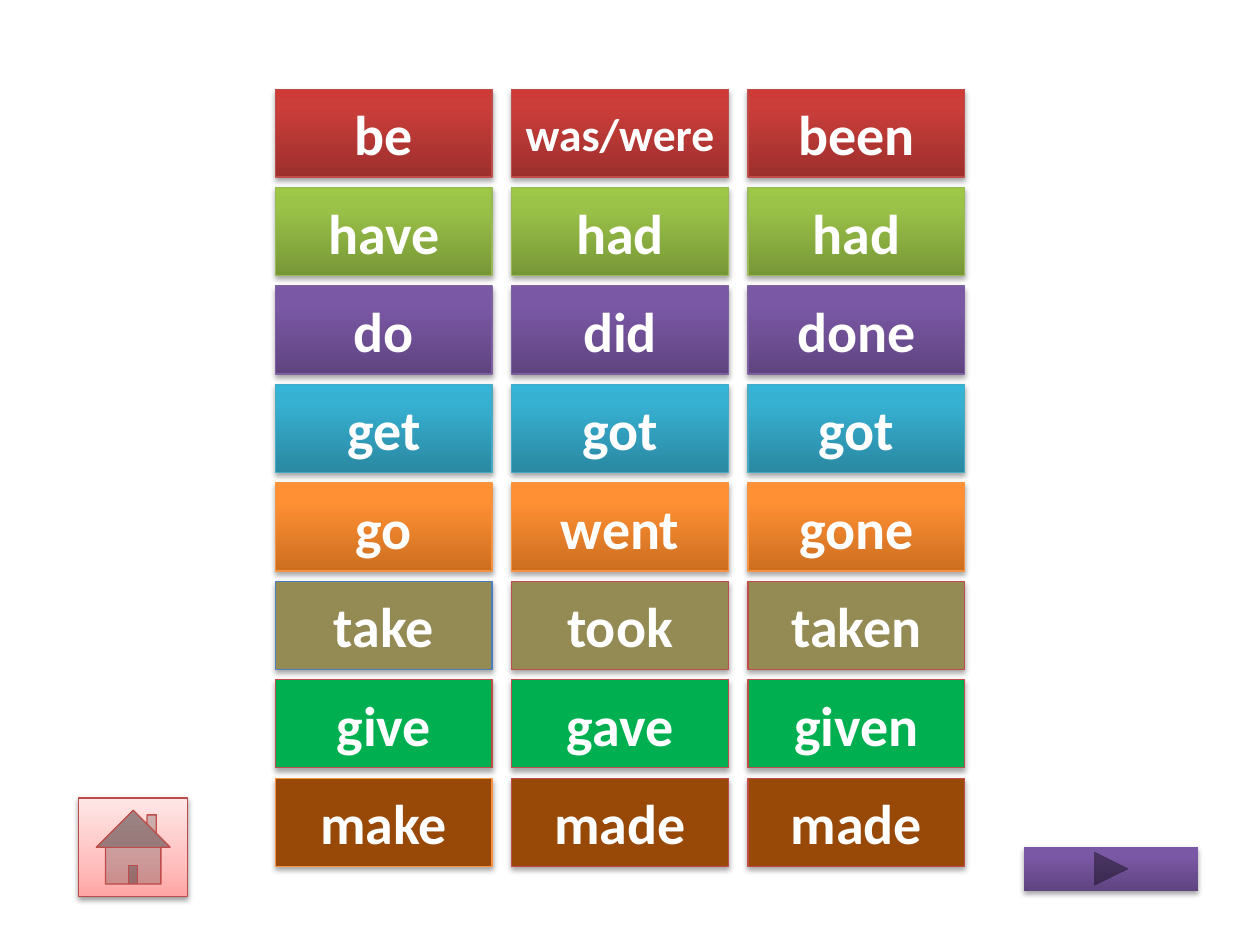
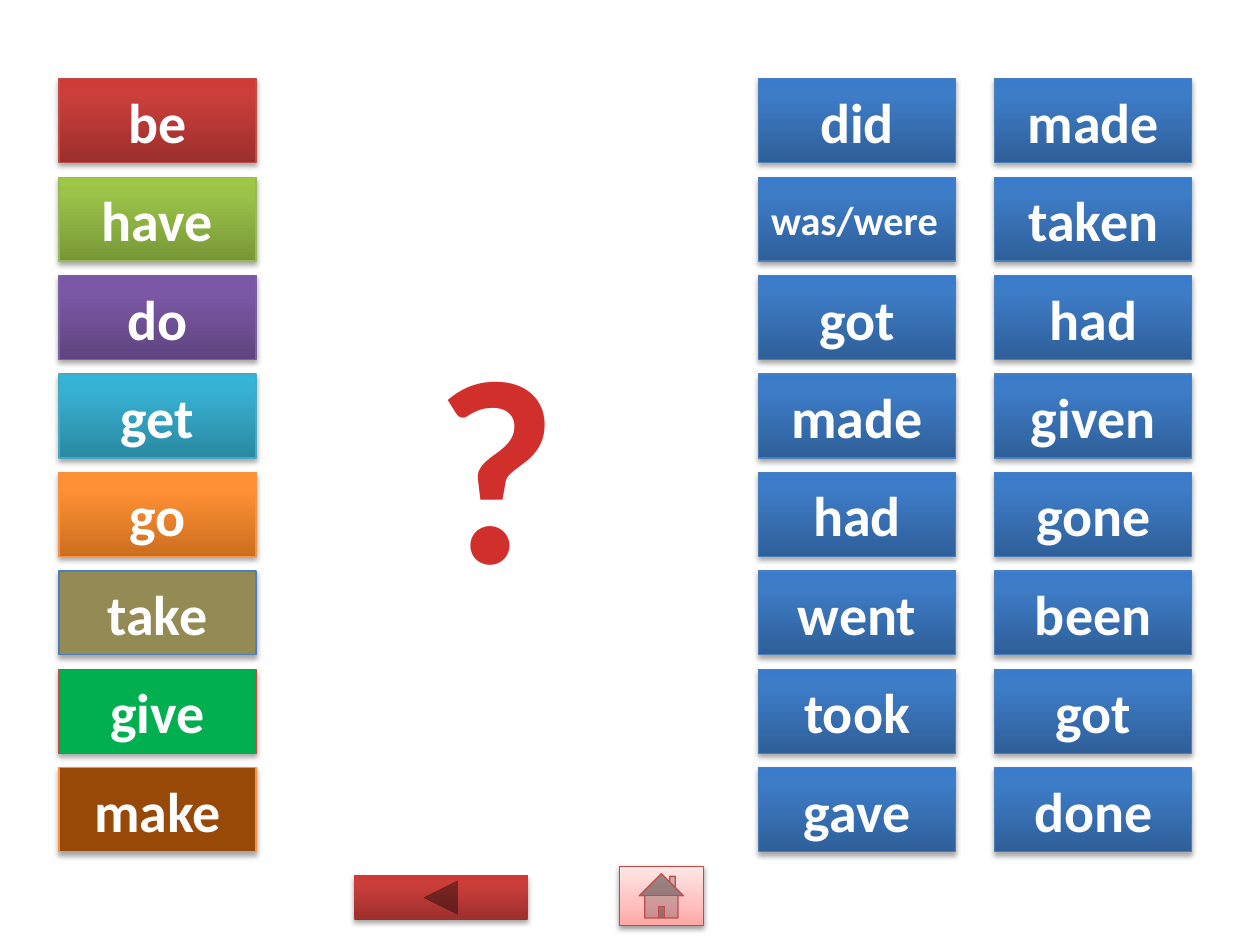
from copy import deepcopy
from lxml.etree import SubElement
from pptx import Presentation
from pptx.dml.color import RGBColor
from pptx.enum.shapes import MSO_SHAPE
from pptx.enum.text import MSO_AUTO_SIZE, PP_ALIGN
from pptx.oxml.ns import qn
from pptx.util import Emu, Pt

PX = 9525
FONT = "Calibri"
WHITE = RGBColor(0xFF, 0xFF, 0xFF)
RED_EDGE = RGBColor(0xBF, 0x4C, 0x48)
GREEN_EDGE = RGBColor(0x98, 0xB9, 0x55)
PURPLE_EDGE = RGBColor(0x7D, 0x60, 0xA0)
TEAL_EDGE = RGBColor(0x46, 0xAA, 0xC5)
ORANGE_EDGE = RGBColor(0xF6, 0x92, 0x40)
BLUE_EDGE = RGBColor(0x4B, 0x7E, 0xBC)

RED = [(0, RGBColor(0x9C, 0x2F, 0x2D)), (0.8, RGBColor(0xCB, 0x3E, 0x3A)), (1, RGBColor(0xCE, 0x3B, 0x37))]
GREEN = [(0, RGBColor(0x77, 0x97, 0x37)), (0.8, RGBColor(0x9B, 0xC3, 0x48)), (1, RGBColor(0x9D, 0xC7, 0x46))]
PURPLE = [(0, RGBColor(0x5F, 0x44, 0x80)), (0.8, RGBColor(0x7B, 0x58, 0xA6)), (1, RGBColor(0x7C, 0x57, 0xA8))]
TEAL = [(0, RGBColor(0x2A, 0x88, 0xA2)), (0.8, RGBColor(0x37, 0xB1, 0xD2)), (1, RGBColor(0x34, 0xB4, 0xD6))]
ORANGE = [(0, RGBColor(0xCC, 0x6E, 0x20)), (0.8, RGBColor(0xFF, 0x90, 0x34)), (1, RGBColor(0xFF, 0x91, 0x36))]
BLUE = [(0, RGBColor(0x2F, 0x5F, 0x99)), (0.8, RGBColor(0x3D, 0x7C, 0xC7)), (1, RGBColor(0x3A, 0x7C, 0xCB))]
PINK = [(0, RGBColor(0xFF, 0xA6, 0xA5)), (0.35, RGBColor(0xFF, 0xC0, 0xBF)), (1, RGBColor(0xFF, 0xE7, 0xE7))]
SCARLET = [(0, RGBColor(0xFC, 0x7C, 0x7A)), (0.75, RGBColor(0xD0, 0x2F, 0x2C)), (1, RGBColor(0xC7, 0x05, 0x00))]
OLIVE = RGBColor(0x94, 0x8A, 0x54)
EMERALD = RGBColor(0x00, 0xB0, 0x50)
BROWN = RGBColor(0x98, 0x48, 0x07)

VERBS = [
    (("be", "was/were", "been"), RED, RED_EDGE, RED_EDGE),
    (("have", "had", "had"), GREEN, GREEN_EDGE, GREEN_EDGE),
    (("do", "did", "done"), PURPLE, PURPLE_EDGE, PURPLE_EDGE),
    (("get", "got", "got"), TEAL, TEAL_EDGE, TEAL_EDGE),
    (("go", "went", "gone"), ORANGE, ORANGE_EDGE, ORANGE_EDGE),
    (("take", "took", "taken"), OLIVE, BLUE_EDGE, RED_EDGE),
    (("give", "gave", "given"), EMERALD, RED_EDGE, RED_EDGE),
    (("make", "made", "made"), BROWN, ORANGE_EDGE, RED_EDGE),
]
SHUFFLED = [("did", "made"), ("was/were", "taken"), ("got", "had"), ("made", "given"),
            ("had", "gone"), ("went", "been"), ("took", "got"), ("gave", "done")]
ROW_STEP = 75
COLUMN_STEP = 180


def paint_gradient(fill, element, stops, angle):
    fill.gradient()
    fill.gradient_angle = angle
    stop_list = element.find(".//" + qn("a:gsLst"))
    stop_list.append(deepcopy(stop_list[-1]))
    for stop, (position, color) in zip(fill.gradient_stops, stops):
        stop.color.rgb = color
        stop.position = position


def add_tile(slide, box, paint, edge=None, word="", size=32, kind=MSO_SHAPE.RECTANGLE, drop=23000, opacity=35000):
    tile = slide.shapes.add_shape(kind, *[Emu(n * PX) for n in box])
    if isinstance(paint, list):
        paint_gradient(tile.fill, tile._element, paint, 90)
    else:
        tile.fill.solid()
        tile.fill.fore_color.rgb = paint
    if edge is None:
        tile.line.fill.background()
    else:
        tile.line.color.rgb = edge
        tile.line.width = Pt(0.75)
    tile.shadow.inherit = False
    effects = tile._element.spPr.find(qn("a:effectLst"))
    shadow = SubElement(effects, qn("a:outerShdw"), blurRad="40000", dist=str(drop), dir="5400000", rotWithShape="0")
    black = SubElement(shadow, qn("a:srgbClr"), val="000000")
    SubElement(black, qn("a:alpha"), val=str(opacity))
    if word:
        paragraph = tile.text_frame.paragraphs[0]
        paragraph.text = word
        paragraph.alignment = PP_ALIGN.CENTER
        font = paragraph.runs[0].font
        font.name, font.size, font.bold = FONT, Pt(size), True
        font.color.rgb = WHITE
    return tile


deck = Presentation()
deck.slide_width, deck.slide_height = Emu(960 * PX), Emu(720 * PX)
answers = deck.slides.add_slide(deck.slide_layouts[6])
quiz = deck.slides.add_slide(deck.slide_layouts[6])

for row, (forms, paint, first_edge, other_edge) in enumerate(VERBS):
    for column, form in enumerate(forms):
        box = (210 + column * COLUMN_STEP, 68 + row * ROW_STEP, 165, 67)
        edge = other_edge if column else first_edge
        add_tile(answers, box, paint, edge, form, 26 if form == "was/were" else 32)
    add_tile(quiz, (45, 60 + row * ROW_STEP, 150, 64), paint, first_edge, forms[0])

for row, forms in enumerate(SHUFFLED):
    for column, form in enumerate(forms):
        box = (578 + column * COLUMN_STEP, 60 + row * ROW_STEP, 150, 64)
        long_form = form == "was/were"
        tile = add_tile(quiz, box, BLUE, BLUE_EDGE, form, 23 if long_form else 32)
        if long_form:
            tile.text_frame.paragraphs[0].alignment = PP_ALIGN.LEFT

add_tile(answers, (780, 645, 133, 34), PURPLE, kind=MSO_SHAPE.ACTION_BUTTON_FORWARD_OR_NEXT)
add_tile(quiz, (270, 667, 132, 34), RED, kind=MSO_SHAPE.ACTION_BUTTON_BACK_OR_PREVIOUS)
for slide, box in ((answers, (60, 608, 83, 75)), (quiz, (472, 660, 64, 45))):
    add_tile(slide, box, PINK, RED_EDGE, kind=MSO_SHAPE.ACTION_BUTTON_HOME, drop=20000, opacity=38000)

question = quiz.shapes.add_textbox(*[Emu(n * PX) for n in (307, 225, 142, 252)])
question.text_frame.word_wrap = False
question.text_frame.auto_size = MSO_AUTO_SIZE.SHAPE_TO_FIT_TEXT
question_line = question.text_frame.paragraphs[0]
question_line.text = "?"
question_line.alignment = PP_ALIGN.CENTER
mark = question_line.runs[0]
mark.font.name, mark.font.size, mark.font.bold = FONT, Pt(150), True
paint_gradient(mark.font.fill, mark._r, SCARLET, 270)

deck.save("out.pptx")
